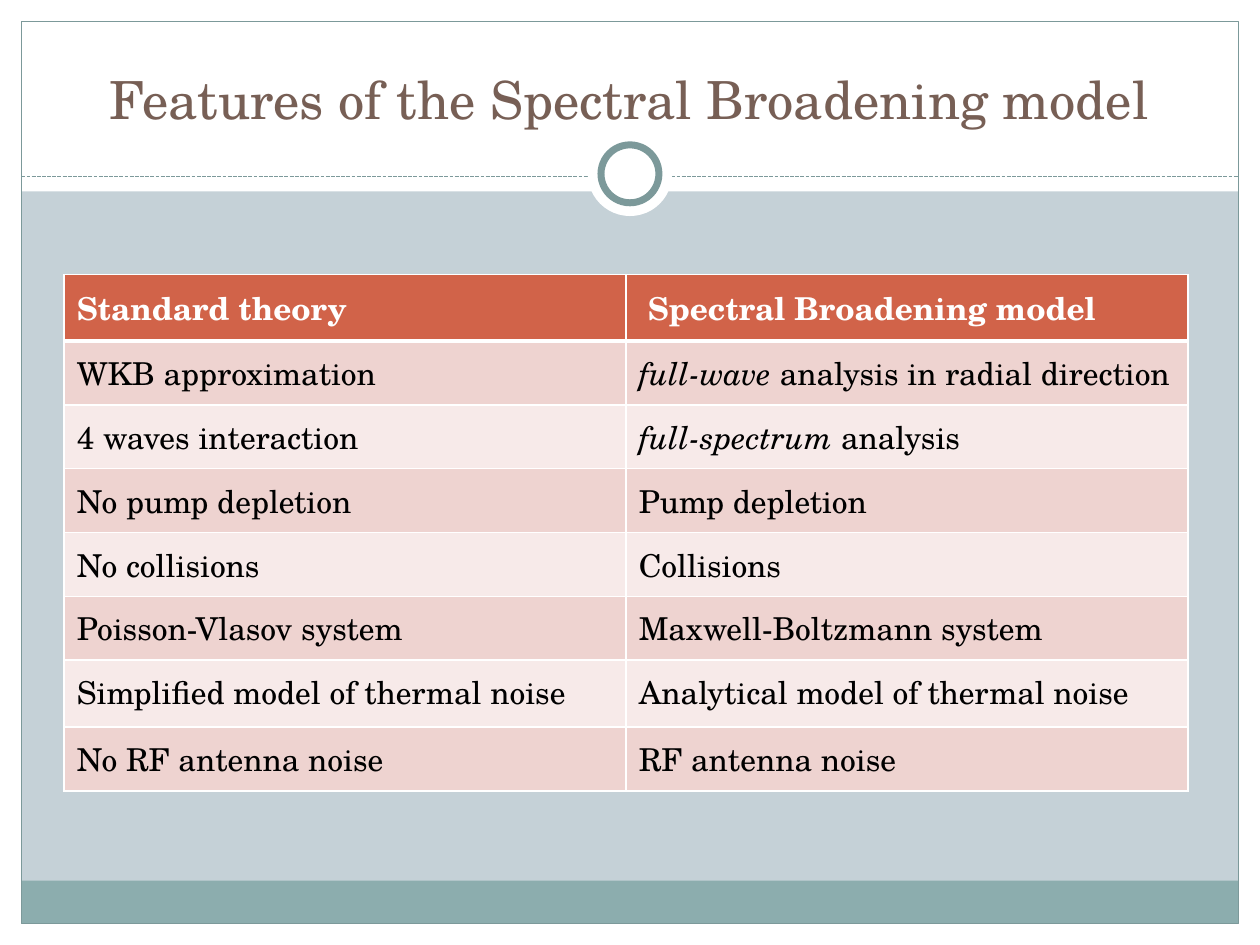
from dataclasses import dataclass

from lxml import etree
from pptx import Presentation
from pptx.dml.color import RGBColor
from pptx.enum.dml import MSO_LINE
from pptx.enum.shapes import MSO_CONNECTOR, MSO_SHAPE
from pptx.enum.text import MSO_ANCHOR, MSO_AUTO_SIZE, PP_ALIGN
from pptx.oxml.ns import qn
from pptx.util import Inches, Pt

RECT, OVAL = MSO_SHAPE.RECTANGLE, MSO_SHAPE.OVAL
STRAIGHT, DASH = MSO_CONNECTOR.STRAIGHT, MSO_LINE.SQUARE_DOT
CENTER, BOTTOM, NO_FIT = PP_ALIGN.CENTER, MSO_ANCHOR.BOTTOM, MSO_AUTO_SIZE.NONE
TITLE_ONLY = 5


@dataclass(frozen=True)
class Theme:
    font: str = "TeX Gyre Schola"
    title_size: float = 30
    table_size: float = 18
    background: str = "C5D1D7"
    white: str = "FFFFFF"
    black: str = "000000"
    title: str = "775F55"
    accent: str = "7C999A"
    footer: str = "8CADAE"
    header: str = "D16349"
    bands: tuple = ("EED3D0", "F7EAE9")


class SlideBuilder:
    def __init__(self, slide, theme):
        self.slide, self.theme = slide, theme
        background = slide.background.fill
        background.solid()
        background.fore_color.rgb = RGBColor.from_string(theme.background)

    def style_font(self, font, size, color, bold=False):
        font.name, font.size, font.bold = self.theme.font, Pt(size), bold
        font.color.rgb = RGBColor.from_string(color)

    def style_line(self, line, color, width):
        line.color.rgb = RGBColor.from_string(color)
        line.width = Pt(width)

    def shape(self, kind, box, fill=None, line=None, line_width=0.75):
        shape = self.slide.shapes.add_shape(kind, *map(Inches, box))
        shape.shadow.inherit = False
        if fill:
            shape.fill.solid()
            shape.fill.fore_color.rgb = RGBColor.from_string(fill)
        else:
            shape.fill.background()
        if line:
            self.style_line(shape.line, line, line_width)
        else:
            shape.line.fill.background()

    def dashed_rule(self, left, right, y):
        rule = self.slide.shapes.add_connector(
            STRAIGHT, Inches(left), Inches(y), Inches(right), Inches(y))
        self.style_line(rule.line, self.theme.accent, 0.75)
        rule.line.dash_style = DASH
        etree.SubElement(rule._element.spPr, qn("a:effectLst"))

    def title(self, text, box):
        title = self.slide.shapes.title
        title.left, title.top, title.width, title.height = map(Inches, box)
        frame = title.text_frame
        frame.text = text
        frame.word_wrap, frame.auto_size = True, NO_FIT
        frame.vertical_anchor = BOTTOM
        paragraph = frame.paragraphs[0]
        paragraph.alignment = CENTER
        self.style_font(paragraph.font, self.theme.title_size, self.theme.title)
        # Bring the title in front of the white frame
        self.slide.shapes._spTree.append(title._element)

    def borders(self, cell, bottom_width):
        properties = cell._tc.get_or_add_tcPr()
        for side, width in (("L", 1), ("R", 1), ("T", 1), ("B", bottom_width)):
            line = etree.SubElement(properties, qn(f"a:ln{side}"), w=str(Pt(width)))
            fill = etree.SubElement(line, qn("a:solidFill"))
            etree.SubElement(fill, qn("a:srgbClr"), val=self.theme.white)

    def cell(self, cell, runs, fill, color, bold, bottom_width):
        self.borders(cell, bottom_width)
        cell.fill.solid()
        cell.fill.fore_color.rgb = RGBColor.from_string(fill)
        cell.margin_left = cell.margin_right = Inches(0.1)
        cell.margin_top = cell.margin_bottom = Inches(0.07)
        paragraph = cell.text_frame.paragraphs[0]
        self.style_font(paragraph.font, self.theme.table_size, color, bold)
        for text, italic in runs:
            run = paragraph.add_run()
            run.text = text
            if italic:
                run.font.italic = True

    def table(self, rows, box, row_heights):
        theme = self.theme
        table = self.slide.shapes.add_table(
            len(rows), len(rows[0]), *map(Inches, box)).table
        for row, height in zip(table.rows, row_heights):
            row.height = Inches(height)
        for r, row in enumerate(rows):
            header = r == 0
            fill = theme.header if header else theme.bands[(r - 1) % 2]
            color = theme.white if header else theme.black
            for c, content in enumerate(row):
                runs = [(content, False)] if isinstance(content, str) else content
                self.cell(table.cell(r, c), runs, fill, color, header,
                          3 if header else 1)


COMPARISON = [
    ("Standard theory", " Spectral Broadening model"),
    ("WKB approximation",
     [("full-wave", True), (" analysis in radial direction", False)]),
    ("4 waves interaction", [("full-spectrum ", True), ("analysis", False)]),
    ("No pump depletion", "Pump depletion"),
    ("No collisions", "Collisions"),
    ("Poisson-Vlasov system", "Maxwell-Boltzmann system"),
    ("Simplified model of thermal noise", "Analytical model of thermal noise"),
    ("No RF antenna noise", "RF antenna noise"),
]


def main():
    width, height, margin = 10, 7.5, 0.17
    prs = Presentation()
    prs.slide_width, prs.slide_height = Inches(width), Inches(height)
    theme = Theme()
    builder = SlideBuilder(
        prs.slides.add_slide(prs.slide_layouts[TITLE_ONLY]), theme)

    # White margins and title band
    for box in ((0, height - margin, width, margin), (0, 0, width, 1.52),
                (0, 0, margin, height), (width - margin, 0, margin, height)):
        builder.shape(RECT, box, theme.white)

    # Footer band, outline and dashed rule
    inner_width = width - 2 * margin
    builder.shape(RECT, (margin, 6.99, inner_width, 0.34), theme.footer)
    builder.shape(RECT, (margin, margin, inner_width, height - 2 * margin),
                  line=theme.accent)
    builder.dashed_rule(margin, width - margin, 1.4)

    # Ring on the rule
    for diameter, line in ((0.67, None), (0.46, theme.accent)):
        builder.shape(OVAL, ((width - diameter) / 2, 1.38 - diameter / 2,
                             diameter, diameter), theme.white, line, 4)

    # Title and comparison table
    builder.title("Features of the Spectral Broadening model",
                  (0.33, 0.25, 9.33, 0.83))
    builder.table(COMPARISON, (0.51, 2.18, 8.92, 3.95),
                  [0.49] * 6 + [0.53, 0.49])
    prs.save("out.pptx")


if __name__ == "__main__":
    main()
